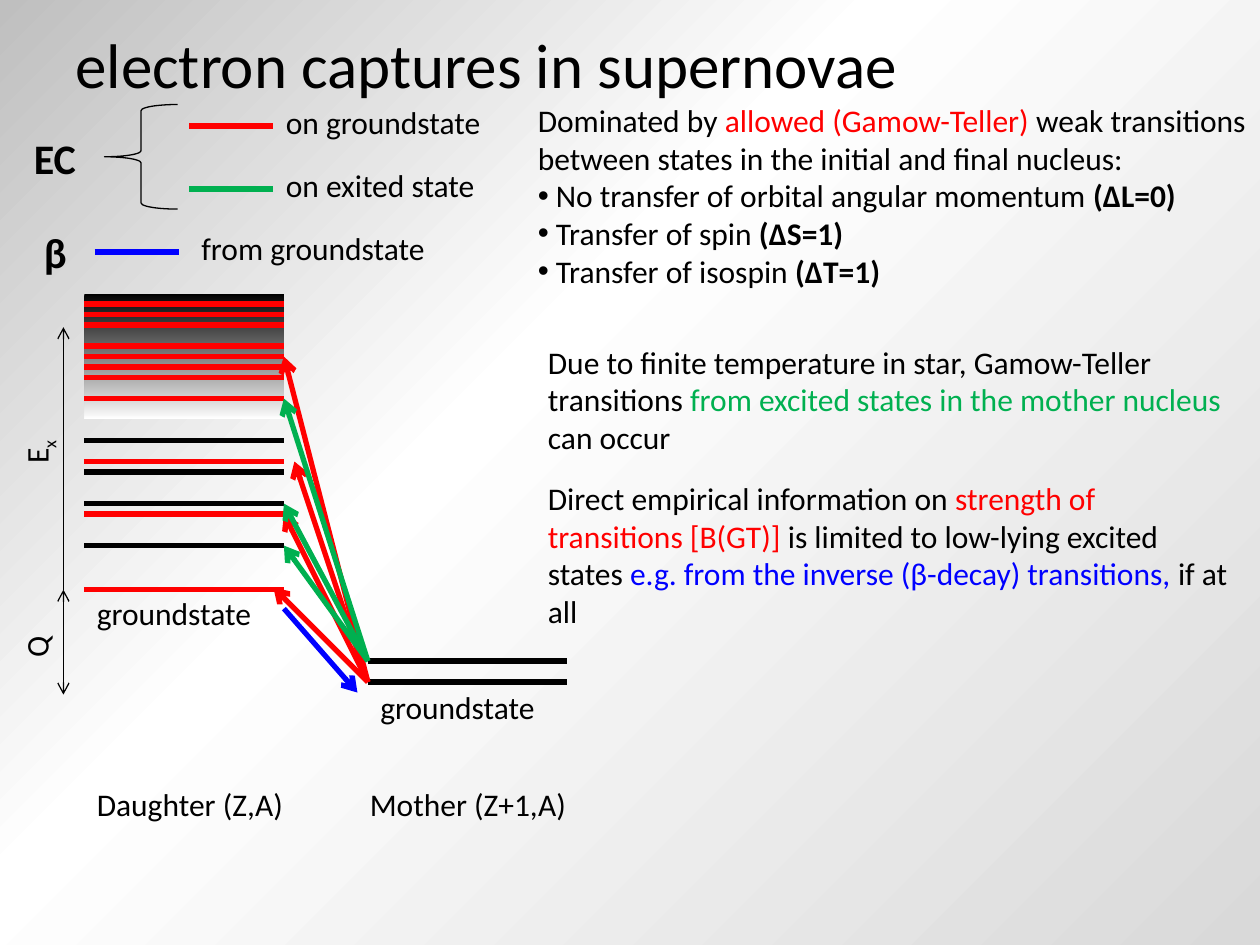
from lxml import etree
from pptx import Presentation
from pptx.dml.color import RGBColor
from pptx.enum.shapes import MSO_CONNECTOR, MSO_SHAPE
from pptx.enum.text import MSO_ANCHOR, MSO_AUTO_SIZE
from pptx.oxml import parse_xml
from pptx.oxml.ns import nsdecls, qn
from pptx.util import Inches, Pt

BLACK = RGBColor(0x00, 0x00, 0x00)
WHITE = RGBColor(0xFF, 0xFF, 0xFF)
RED = RGBColor(0xFF, 0x00, 0x00)
GREEN = RGBColor(0x00, 0xB0, 0x50)
BLUE = RGBColor(0x00, 0x00, 0xFF)
GREY = RGBColor(0xBF, 0xBF, 0xBF)
LIGHT_GREY = RGBColor(0xD9, 0xD9, 0xD9)
FONT = "Calibri"
STEP = 1 / 12
LEVEL_W = 19
MOTHER_X = 27
GROUND_Y = 28.2


def set_gradient(fill, stops, angle):
    """Fill with (percent, colour) stops at a clockwise angle."""
    fill.gradient()
    fill.gradient_angle = 360 - angle
    items = "".join(
        f'<a:gs pos="{pos * 1000}"><a:srgbClr val="{color}"/></a:gs>' for pos, color in stops
    )
    old = fill.gradient_stops[0]._gs.getparent()
    old.getparent().replace(old, parse_xml(f"<a:gsLst {nsdecls('a')}>{items}</a:gsLst>"))


def add_text(s, paragraphs, x, y, w, h, size=18, wrap=False, vert=None,
             anchor=MSO_ANCHOR.TOP):
    """Add a text box; each paragraph is a string or a list of (text, format) runs."""
    sp = s.shapes.add_textbox(Inches(x), Inches(y), Inches(w), Inches(h))
    tf = sp.text_frame
    tf.word_wrap = wrap
    tf.auto_size = MSO_AUTO_SIZE.NONE
    tf.vertical_anchor = anchor
    if vert:
        tf._txBody.bodyPr.set("vert", vert)
    for i, runs in enumerate(paragraphs):
        p = tf.paragraphs[0] if i == 0 else tf.add_paragraph()
        for text, fmt in [(runs, {})] if isinstance(runs, str) else runs:
            r = p.add_run()
            r.text = text
            r.font.name = FONT
            r.font.size = Pt(size)
            r.font.bold = fmt.get("bold", False)
            r.font.color.rgb = fmt.get("color", BLACK)
            if "baseline" in fmt:
                r.font._element.set("baseline", str(fmt["baseline"]))
    return sp


def add_bullet(p):
    """Give a paragraph a round bullet."""
    pPr = p._p.get_or_add_pPr()
    etree.SubElement(pPr, qn("a:buFont")).set("typeface", "Arial")
    etree.SubElement(pPr, qn("a:buChar")).set("char", "•")


def add_line(s, start, end, color=BLACK, width=3, head=False, tail=False):
    """Add a straight line with optional open arrowheads."""
    points = [Inches(v) for v in (*start, *end)]
    line = s.shapes.add_connector(MSO_CONNECTOR.STRAIGHT, *points)
    line.line.color.rgb = color
    line.line.width = Pt(width)
    ln = line.line._get_or_add_ln()
    for tag, wanted in (("a:headEnd", head), ("a:tailEnd", tail)):
        if wanted:
            etree.SubElement(ln, qn(tag)).set("type", "arrow")
    etree.SubElement(line._element.spPr, qn("a:effectLst"))
    return line


def add_legend(s, x, y):
    """Explain the line colours from the given corner."""
    brace = s.shapes.add_shape(
        MSO_SHAPE.LEFT_BRACE, Inches(x + 0.66), Inches(y), Inches(0.58), Inches(0.83)
    )
    brace.shadow.inherit = False
    brace.fill.background()
    brace.line.color.rgb = BLACK
    brace.line.width = Pt(0.75)
    for text, dx, dy, w in (("EC", 0, 0.17, 0.67), ("β", 0.08, 0.92, 0.39)):
        add_text(s, [[(text, {"bold": True})]], x + dx, y + dy, w, 0.5, size=24)
    for text, color, dx, dy, w in (
        ("on groundstate", RED, 1.33, 0.17, 1.96),
        ("on exited state", GREEN, 1.33, 0.67, 1.84),
        ("from groundstate", BLUE, 0.58, 1.17, 2.11),
    ):
        add_line(s, (x + dx, y + dy), (x + dx + 0.67, y + dy), color)
        gap = 0.75 if color == BLUE else 0.67
        add_text(s, [text], x + dx + gap, y + dy - 0.23, w, 0.4)


def add_level_scheme(s, x, y):
    """Draw daughter and mother levels with transitions on a grid of twelfths."""

    def at(col, row):
        return x + col * STEP, y + row * STEP

    def add_levels(col, rows, color):
        for row in rows:
            add_line(s, at(col, row), at(col + LEVEL_W, row), color)

    def add_transitions(start, ends, color):
        for end in ends:
            add_line(s, at(*start), at(*end), color, tail=True)

    add_levels(0, (14, 17, 20, 24), BLACK)
    add_levels(0, (16, 21, GROUND_Y), RED)
    add_levels(MOTHER_X, (37,), BLACK)
    band = s.shapes.add_shape(
        MSO_SHAPE.RECTANGLE, Inches(x), Inches(y), Inches(LEVEL_W * STEP), Inches(1)
    )
    band.shadow.inherit = False
    band.line.fill.background()
    set_gradient(band.fill, [(0, BLACK), (100, WHITE)], 90)
    add_transitions((MOTHER_X, 37), [(18, 28), (19, 21), (20, 16), (19, 6)], RED)
    add_levels(0, (1, 2, 3, 5, 6, 7, 8, 10), RED)
    add_transitions((19, 30), [(26, 38)], BLUE)
    add_levels(MOTHER_X, (35,), BLACK)
    add_transitions((MOTHER_X, 35), [(19, 24), (19, 20), (19, 10)], GREEN)

    for row, head in ((3.2, False), (38.2, True)):
        add_line(s, at(-2, GROUND_Y), at(-2, row), width=0.75, head=head, tail=True)
    energy = [("E", {}), ("x", {"baseline": -25000})]
    for runs, row, h in ((energy, 13.2, 0.35), ("Q", 32.2, 0.3)):
        add_text(s, [runs], *at(-7, row), 0.5, h, vert="vert270")
    for text, col, row, w in (
        ("groundstate", 0, 28, 1.53),
        ("groundstate", MOTHER_X, 37, 1.53),
        ("Daughter (Z,A)", 0, 46.2, 1.87),
        ("Mother (Z+1,A)", 26, 46.2, 1.91),
    ):
        add_text(s, [text], *at(col, row), w, 0.4)


def add_notes_column(s, x, y, w):
    """Place the three explanations below each other."""
    rules = [
        (" No transfer of orbital angular momentum", " (ΔL=0)"),
        (" Transfer of spin", " (ΔS=1)"),
        (" Transfer of isospin ", "(ΔT=1)"),
    ]
    intro = [
        ("Dominated by ", {}),
        ("allowed (Gamow-Teller)", {"color": RED}),
        (" weak transitions between states in the initial and final nucleus:", {}),
    ]
    bullets = [[(text, {}), (rule, {"bold": True})] for text, rule in rules]
    sp = add_text(s, [intro, *bullets], x, y, w, 1.92, wrap=True)
    for p in sp.text_frame.paragraphs[1:]:
        add_bullet(p)
    add_text(s, [[
        ("Due to finite temperature in star, Gamow-Teller transitions ", {}),
        ("from excited states in the mother nucleus", {"color": GREEN}),
        (" can occur", {}),
    ]], x + 0.08, y + 1.92, w - 0.08, 1.01, wrap=True)
    add_text(s, [[
        ("Direct empirical information on ", {}),
        ("strength of transitions [B(GT)]", {"color": RED}),
        (" is limited to low-lying excited states ", {}),
        ("e.g. from the inverse (β-decay) transitions, ", {"color": BLUE}),
        ("if at all", {}),
    ]], x + 0.08, y + 3, w - 0.16, 1.31, wrap=True)


def main():
    """Build the slide and save it."""
    prs = Presentation()
    prs.slide_width, prs.slide_height = Inches(10), Inches(7.5)
    s = prs.slides.add_slide(prs.slide_layouts[6])
    set_gradient(s.background.fill, [(0, GREY), (40, WHITE), (100, LIGHT_GREY)], 45)
    add_text(s, ["electron captures in supernovae"], 0.5, 0.08, 9, 0.85, size=36,
             wrap=True, anchor=MSO_ANCHOR.MIDDLE)
    add_level_scheme(s, 0.67, 2.33)
    add_legend(s, 0.17, 0.83)
    add_notes_column(s, 4.17, 0.75, 5.83)
    prs.save("out.pptx")


if __name__ == "__main__":
    main()
